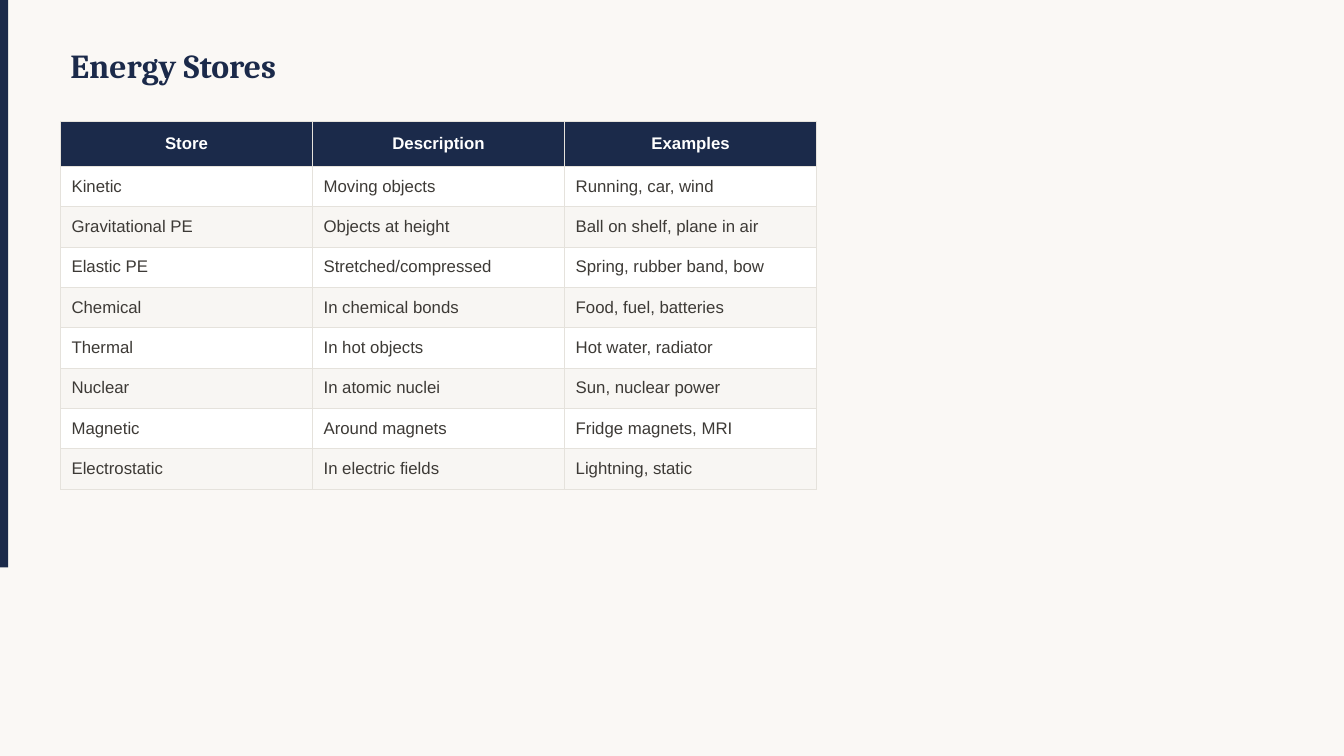
import pptx
import pptx.dml.color
import pptx.enum.shapes
import pptx.enum.text
import pptx.oxml
import pptx.oxml.ns
import pptx.util

PX = 9144  # EMU per px, 100 px to the inch
NAVY = pptx.dml.color.RGBColor(0x1B, 0x2A, 0x4A)
CREAM = pptx.dml.color.RGBColor(0xFA, 0xF8, 0xF5)
BAND = pptx.dml.color.RGBColor(0xF8, 0xF6, 0xF3)
WHITE = pptx.dml.color.RGBColor(0xFF, 0xFF, 0xFF)
INK = pptx.dml.color.RGBColor(0x3D, 0x3A, 0x36)
BORDER = pptx.dml.color.RGBColor(0xE5, 0xE2, 0xDC)

ENERGY_STORES = [
    ("Store", "Description", "Examples"),
    ("Kinetic", "Moving objects", "Running, car, wind"),
    ("Gravitational PE", "Objects at height", "Ball on shelf, plane in air"),
    ("Elastic PE", "Stretched/compressed", "Spring, rubber band, bow"),
    ("Chemical", "In chemical bonds", "Food, fuel, batteries"),
    ("Thermal", "In hot objects", "Hot water, radiator"),
    ("Nuclear", "In atomic nuclei", "Sun, nuclear power"),
    ("Magnetic", "Around magnets", "Fridge magnets, MRI"),
    ("Electrostatic", "In electric fields", "Lightning, static"),
]
COLUMN_WIDTH = 250
HEADER_HEIGHT = 45
ROW_HEIGHT = 40


def add_run(paragraph, text, font_name, size, color, bold):
    run = paragraph.add_run()
    run.text = text
    run.font.name = font_name
    run.font.size = pptx.util.Pt(size)
    run.font.color.rgb = color
    run.font.bold = bold


def add_borders(cell):
    properties = cell._tc.get_or_add_tcPr()
    for side in ("lnL", "lnR", "lnT", "lnB"):
        properties.append(pptx.oxml.parse_xml(
            f'<a:{side} {pptx.oxml.ns.nsdecls("a")} w="{pptx.util.Pt(0.5)}">'
            f'<a:solidFill><a:srgbClr val="{BORDER}"/></a:solidFill></a:{side}>'))


presentation = pptx.Presentation()
presentation.slide_width = 1333 * PX
presentation.slide_height = 750 * PX
slide = presentation.slides.add_slide(presentation.slide_layouts[6])
slide.background.fill.solid()
slide.background.fill.fore_color.rgb = CREAM

# Left accent bar
accent_bar = slide.shapes.add_shape(
    pptx.enum.shapes.MSO_SHAPE.RECTANGLE, 0, 0, 8 * PX, 563 * PX)
accent_bar.shadow.inherit = False
accent_bar.fill.solid()
accent_bar.fill.fore_color.rgb = NAVY
accent_bar.line.fill.background()

# Title
title = slide.shapes.add_textbox(60 * PX, 30 * PX, 1000 * PX, 70 * PX)
title.text_frame.word_wrap = True
title.text_frame.vertical_anchor = pptx.enum.text.MSO_ANCHOR.MIDDLE
add_run(title.text_frame.paragraphs[0], "Energy Stores", "Cambria", 24, NAVY, True)

# Table with a navy header and alternating bands
row_count = len(ENERGY_STORES)
column_count = len(ENERGY_STORES[0])
table_height = HEADER_HEIGHT + (row_count - 1) * ROW_HEIGHT
table = slide.shapes.add_table(
    row_count, column_count, 60 * PX, 120 * PX,
    column_count * COLUMN_WIDTH * PX, table_height * PX).table
for column in table.columns:
    column.width = COLUMN_WIDTH * PX

for row_index, texts in enumerate(ENERGY_STORES):
    is_header = row_index == 0
    table.rows[row_index].height = (HEADER_HEIGHT if is_header else ROW_HEIGHT) * PX
    if is_header:
        fill_color = NAVY
    else:
        fill_color = WHITE if row_index % 2 else BAND
    for column_index, text in enumerate(texts):
        cell = table.cell(row_index, column_index)
        add_borders(cell)
        cell.fill.solid()
        cell.fill.fore_color.rgb = fill_color
        cell.vertical_anchor = pptx.enum.text.MSO_ANCHOR.MIDDLE
        cell.margin_left = cell.margin_right = 11 * PX
        cell.margin_top = cell.margin_bottom = 6 * PX
        paragraph = cell.text_frame.paragraphs[0]
        if is_header:
            paragraph.alignment = pptx.enum.text.PP_ALIGN.CENTER
        add_run(paragraph, text, "Arial", 12, WHITE if is_header else INK, is_header)

presentation.save("out.pptx")
